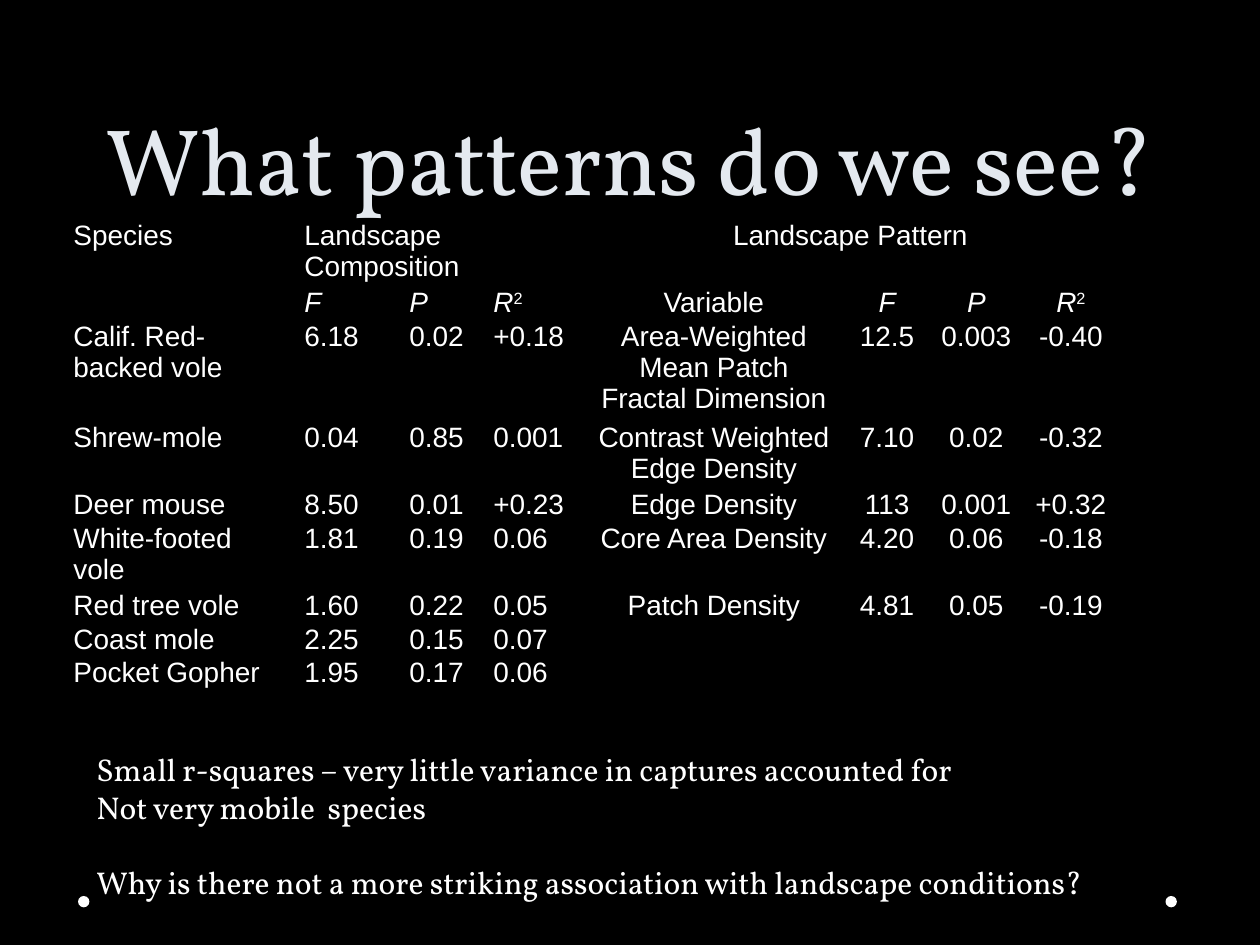
"""Build the slide on species abundance and landscape patterns."""
import pptx
import pptx.dml.color
import pptx.enum.shapes
import pptx.enum.text
import pptx.util

Pt = pptx.util.Pt
ALIGN = pptx.enum.text.PP_ALIGN
COLORS = {"background": "000000", "text": "FFFFFF", "title": "E4E9EF"}
TITLE = "What patterns do we see?"
STATISTICS = ["F", "P", "R2"]
ROWS = [
    ["Species", "Landscape Composition", "", "", "Landscape Pattern", "", "", ""],
    ["", *STATISTICS, "Variable", *STATISTICS],
    ["Calif. Red-backed vole", "6.18", "0.02", "+0.18",
     "Area-Weighted Mean Patch Fractal Dimension", "12.5", "0.003", "-0.40"],
    ["Shrew-mole", "0.04", "0.85", "0.001", "Contrast Weighted Edge Density", "7.10", "0.02", "-0.32"],
    ["Deer mouse", "8.50", "0.01", "+0.23", "Edge Density", "113", "0.001", "+0.32"],
    ["White-footed vole", "1.81", "0.19", "0.06", "Core Area Density", "4.20", "0.06", "-0.18"],
    ["Red tree vole", "1.60", "0.22", "0.05", "Patch Density", "4.81", "0.05", "-0.19"],
    ["Coast mole", "2.25", "0.15", "0.07", "", "", "", ""],
    ["Pocket Gopher", "1.95", "0.17", "0.06", "", "", "", ""],
]
COLUMN_WIDTHS = [132, 60, 48, 57, 150, 48, 54, 54]
ROW_HEIGHTS = [18.7, 18.7, 24] + [18.7] * 6
MERGES = [(1, 3), (4, 7)]
PATTERN_COLUMN = 4
NO_STYLE = "{2D5ABB26-0587-4C30-8999-92F81FD0307C}"
NOTES = [
    ("Small r-squares – very little variance in captures accounted for", 0),
    ("Not very mobile  species", 0),
    ("Why is there not a more striking association with landscape conditions?", 21.4),
]
DOT_LEFTS = [44.6, 666]
DOT_TOP, DOT_SIZE = 512, 6.5


def rgb(name):
    return pptx.dml.color.RGBColor.from_string(COLORS[name])


def add_text(para, text, size=16, font="Arial", color="text", italic=False, raised=False):
    span = para.add_run()
    span.text = text
    span.font.size = Pt(size)
    span.font.name = font
    span.font.italic = italic
    span.font.color.rgb = rgb(color)
    if raised:
        span.font._element.set("baseline", "30000")


def add_box(page, left, top, width, height):
    box = page.shapes.add_textbox(Pt(left), Pt(top), Pt(width), Pt(height))
    box.text_frame.word_wrap = True
    return box.text_frame


def fill_cell(cell, text, centered):
    cell.fill.background()
    cell.margin_left = cell.margin_right = Pt(6)
    cell.margin_top = cell.margin_bottom = 0
    para = cell.text_frame.paragraphs[0]
    para.alignment = ALIGN.CENTER if centered else ALIGN.LEFT
    if not text:
        para._p.get_or_add_endParaRPr().set("sz", "1600")
    elif text in STATISTICS:
        add_text(para, text[0], italic=True)
        if text[1:]:
            add_text(para, text[1:], raised=True)
    else:
        add_text(para, text)


def add_results(page):
    frame = page.shapes.add_table(len(ROWS), len(COLUMN_WIDTHS), Pt(36), Pt(126),
                                  Pt(sum(COLUMN_WIDTHS)), Pt(sum(ROW_HEIGHTS)))
    table = frame.table
    table.first_row = table.horz_banding = False
    table._tbl.tblPr[0].text = NO_STYLE
    for column, width in zip(table.columns, COLUMN_WIDTHS):
        column.width = Pt(width)
    for row, height in zip(table.rows, ROW_HEIGHTS):
        row.height = Pt(height)
    for first, last in MERGES:
        table.cell(0, first).merge(table.cell(0, last))
    for row, values in zip(table.rows, ROWS):
        for index, (cell, value) in enumerate(zip(row.cells, values)):
            fill_cell(cell, value, index >= PATTERN_COLUMN)


def main():
    deck = pptx.Presentation()
    deck.slide_width, deck.slide_height = Pt(720), Pt(540)
    page = deck.slides.add_slide(deck.slide_layouts[6])
    page.background.fill.solid()
    page.background.fill.fore_color.rgb = rgb("background")

    for left in DOT_LEFTS:
        dot = page.shapes.add_shape(pptx.enum.shapes.MSO_SHAPE.OVAL, Pt(left), Pt(DOT_TOP),
                                    Pt(DOT_SIZE), Pt(DOT_SIZE))
        dot.shadow.inherit = False
        dot.fill.solid()
        dot.fill.fore_color.rgb = rgb("text")
        dot.line.fill.background()

    title = add_box(page, 36, 0, 648, 126)
    title.vertical_anchor = pptx.enum.text.MSO_ANCHOR.BOTTOM
    para = title.paragraphs[0]
    para.alignment = ALIGN.CENTER
    para.line_spacing = Pt(58)
    add_text(para, TITLE, size=54, font="Vollkorn", color="title")

    add_results(page)

    notes = add_box(page, 48, 425, 592, 94)
    for index, (text, gap) in enumerate(NOTES):
        para = notes.add_paragraph() if index else notes.paragraphs[0]
        para.space_before = Pt(gap)
        add_text(para, text, size=18, font="Vollkorn")

    deck.save("out.pptx")


if __name__ == "__main__":
    main()
